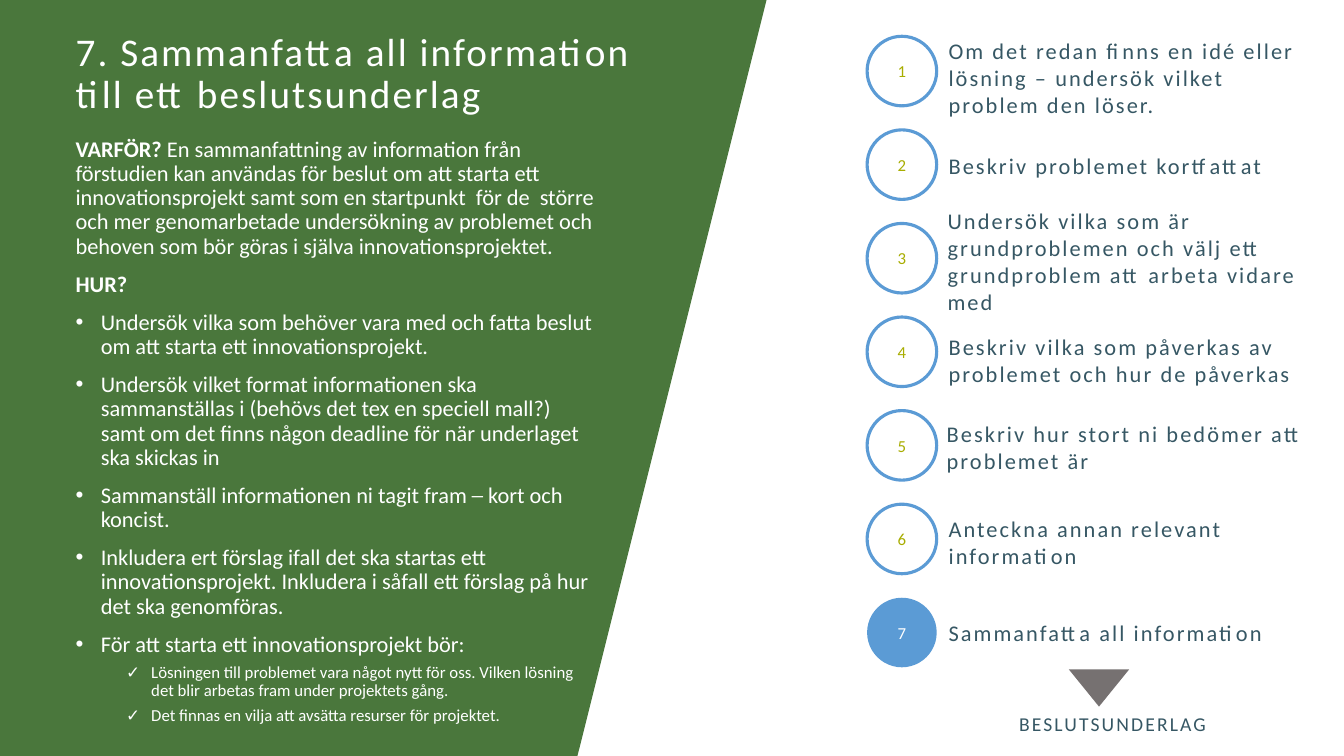
from lxml import etree
from pptx import Presentation
from pptx.dml.color import RGBColor
from pptx.enum.shapes import MSO_SHAPE as SHAPE
from pptx.enum.text import MSO_ANCHOR as ANCHOR, MSO_AUTO_SIZE as AUTOSIZE, PP_ALIGN as ALIGN
from pptx.oxml.ns import qn
from pptx.util import Inches, Pt

GREEN, BLUE, LIME = "4A773C", "5B9BD5", "A8AD00"
SLATE, GRAY, WHITE = "365764", "767171", "FFFFFF"

TITLE = "7. Sammanfatta all information till ett beslutsunderlag"
# Each paragraph: bold lead, text, bullet
BODY = [
    ("VARFÖR? ", "En sammanfattning av information från förstudien kan användas för beslut "
     "om att starta ett innovationsprojekt samt som en startpunkt  för de  större och mer "
     "genomarbetade undersökning av problemet och behoven som bör göras i själva "
     "innovationsprojektet.", None),
    ("HUR?", "", None),
    ("", "Undersök vilka som behöver vara med och fatta beslut om att starta ett "
     "innovationsprojekt.", "•"),
    ("", "Undersök vilket format informationen ska sammanställas i (behövs det tex en speciell "
     "mall?) samt om det finns någon deadline för när underlaget ska skickas in", "•"),
    ("", "Sammanställ informationen ni tagit fram ─ kort och koncist.", "•"),
    ("", "Inkludera ert förslag ifall det ska startas ett innovationsprojekt. Inkludera i "
     "såfall ett förslag på hur det ska genomföras.", "•"),
    ("", "För att starta ett innovationsprojekt bör:", "•"),
    ("", "Lösningen till problemet vara något nytt för oss. Vilken lösning det blir arbetas "
     "fram under projektets gång.", "✓"),
    ("", "Det finnas en vilja att avsätta resurser för projektet.", "✓"),
]
# Bullet: level, left margin, hanging indent, space before, text size
PARAGRAPH_STYLES = {None: (0, 0, 0, 10, 16), "•": (0, 0.25, -0.25, 10, 16),
                    "✓": (1, 0.75, -0.25, 5, 12)}
# Each step: label, label left, top, width, height
STEPS = [
    ("Om det redan finns en idé eller lösning – undersök vilket problem den löser.",
     9.31, 0.32, 3.8, 0.91),
    ("Beskriv problemet kortfattat", 9.31, 1.46, 3.46, 0.37),
    ("Undersök vilka som är grundproblemen och välj ett grundproblem att arbeta vidare med",
     9.3, 2.01, 3.88, 1.45),
    ("Beskriv vilka som påverkas av problemet och hur de påverkas", 9.31, 3.26, 3.87, 0.64),
    ("Beskriv hur stort ni bedömer att problemet är", 9.29, 4.12, 3.82, 0.64),
    ("Anteckna annan relevant information", 9.31, 5.06, 3.82, 0.64),
    ("Sammanfatta all information", 9.31, 6.09, 3.8, 0.37),
]


def rgb(color):
    return RGBColor.from_string(color)


def inches(*lengths):
    return [Inches(v) for v in lengths]


def place(sp, *box):
    for name, value in zip(("left", "top", "width", "height"), inches(*box)):
        setattr(sp, name, value)


def add_run(p, text, size, color, spacing=0, **formats):
    r = p.add_run()
    r.text = text
    for name, value in {"name": "Calibri", "size": Pt(size), **formats}.items():
        setattr(r.font, name, value)
    r.font.color.rgb = rgb(color)
    if spacing:
        r._r.get_or_add_rPr().set("spc", str(int(spacing * 100)))


def add_shape(s, kind, box, fill, line=None):
    sp = s.shapes.add_shape(kind, *inches(*box))
    sp.shadow.inherit = False
    sp.fill.solid()
    sp.fill.fore_color.rgb = rgb(fill)
    if line:
        sp.line.color.rgb = rgb(line)
        sp.line.width = Pt(2.25)
    else:
        sp.line.fill.background()
    return sp


def add_label(s, text, box, size, align=ALIGN.LEFT):
    tf = s.shapes.add_textbox(*inches(*box)).text_frame
    tf.word_wrap = True
    tf.paragraphs[0].alignment = align
    add_run(tf.paragraphs[0], text, size, SLATE, spacing=1.5)


def set_bullet(p, bullet, margin, indent):
    pPr = p._p.get_or_add_pPr()
    pPr.set("marL", str(Inches(margin)))
    pPr.set("indent", str(Inches(indent)))
    if bullet:
        etree.SubElement(pPr, qn("a:buFont")).set("typeface", "Arial")
        etree.SubElement(pPr, qn("a:buChar")).set("char", bullet)
    else:
        etree.SubElement(pPr, qn("a:buNone"))


def add_panel(s, *box):
    """Put the green panel behind the placeholders."""
    sp = add_shape(s, SHAPE.PARALLELOGRAM, box, GREEN)
    sp._element.getparent().insert(2, sp._element)


def fill_title(s, *box):
    place(s.shapes.title, *box)
    tf = s.shapes.title.text_frame
    for name, value in {"auto_size": AUTOSIZE.NONE, "word_wrap": True,
                        "vertical_anchor": ANCHOR.BOTTOM}.items():
        setattr(tf, name, value)
    p = tf.paragraphs[0]
    p.alignment, p.line_spacing = ALIGN.LEFT, 0.9
    add_run(p, TITLE, 28, WHITE, spacing=1.5)


def fill_body(s, *box):
    body = s.placeholders[1]
    place(body, *box)
    tf = body.text_frame
    tf.auto_size = AUTOSIZE.NONE
    for i, (lead, text, bullet) in enumerate(BODY):
        p = tf.add_paragraph() if i else tf.paragraphs[0]
        level, margin, indent, before, size = PARAGRAPH_STYLES[bullet]
        for name, value in {"level": level, "line_spacing": 0.9,
                            "space_before": Pt(before)}.items():
            setattr(p, name, value)
        set_bullet(p, bullet, margin, indent)
        if lead:
            add_run(p, lead, size, WHITE, bold=True)
        if text:
            add_run(p, text, size, WHITE)


def add_step_circle(s, number, current, *box):
    fill, line, color = (BLUE, None, WHITE) if current else (WHITE, BLUE, LIME)
    sp = add_shape(s, SHAPE.OVAL, box, fill, line)
    if not current:
        fill_color = sp._element.spPr.find(qn("a:solidFill"))[0]
        etree.SubElement(fill_color, qn("a:alpha")).set("val", "65000")
    tf = sp.text_frame
    tf.vertical_anchor = ANCHOR.MIDDLE
    tf.paragraphs[0].alignment = ALIGN.CENTER
    add_run(tf.paragraphs[0], str(number), 12, color)


def add_steps(s, left, top, height, size=0.69):
    pitch = (height - size) / (len(STEPS) - 1)
    for i, (text, *box) in enumerate(STEPS):
        add_step_circle(s, i + 1, i == len(STEPS) - 1, left, top + i * pitch, size, size)
        add_label(s, text, box, 16)


def add_outcome(s, left, top, width):
    arrow = add_shape(s, SHAPE.ISOSCELES_TRIANGLE, (left + 0.95, top, 0.6, 0.37), GRAY)
    arrow.rotation = 180
    add_label(s, "BESLUTSUNDERLAG", (left, top + 0.37, width, 0.34), 14, ALIGN.CENTER)


def main():
    prs = Presentation()
    prs.slide_width, prs.slide_height = inches(13.33, 7.5)
    s = prs.slides.add_slide(prs.slide_layouts[1])
    add_panel(s, -2.07, -0.03, 9.68, 7.87)
    fill_title(s, 0.65, 0.45, 6.18, 0.76)
    fill_body(s, 0.65, 1.32, 5.4, 5.29)
    add_steps(s, 8.6, 0.36, 6.26)
    add_outcome(s, 9.65, 6.64, 2.77)
    prs.save("out.pptx")


if __name__ == "__main__":
    main()
